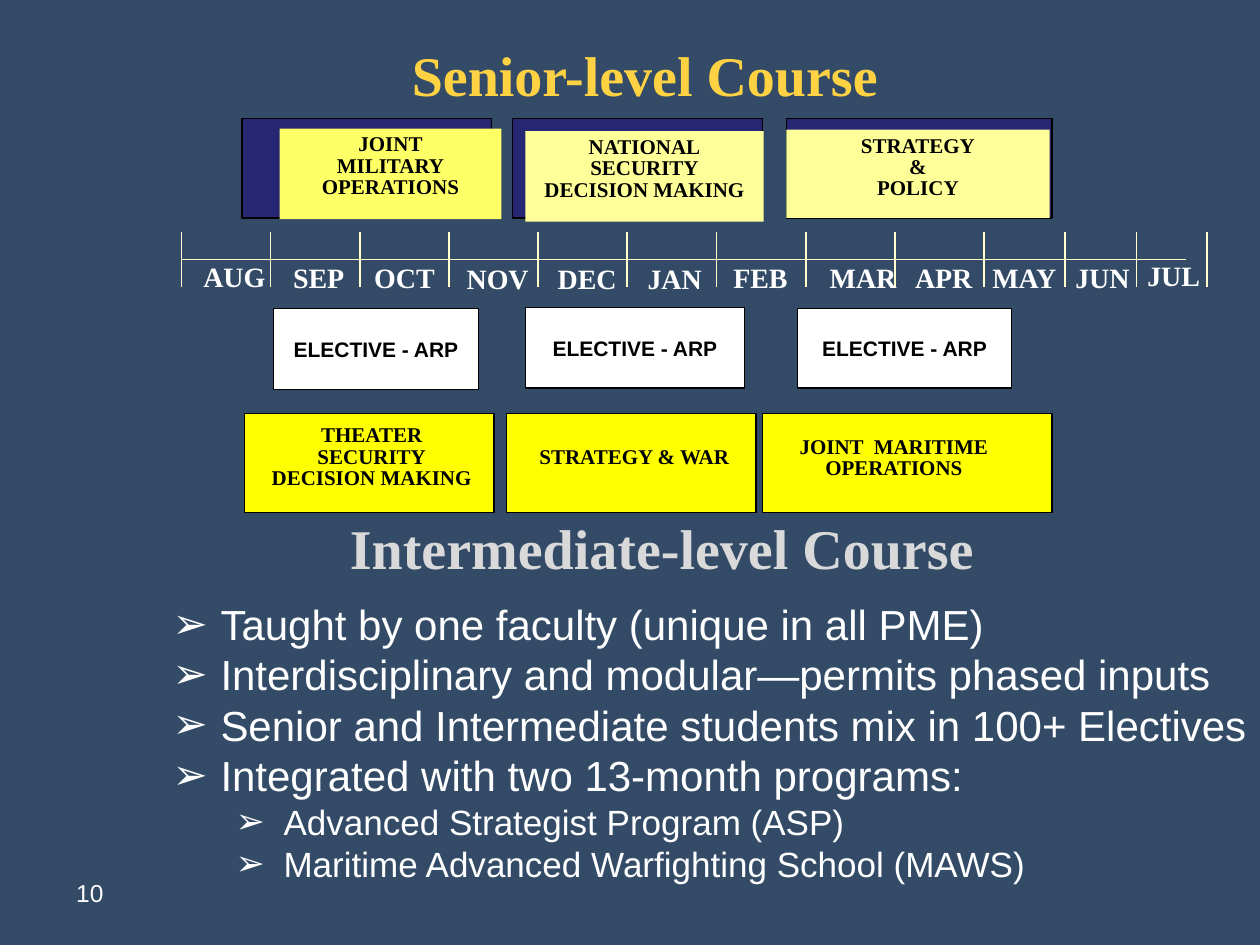
from lxml.etree import SubElement
from pptx import Presentation
from pptx.dml.color import RGBColor as RGB
from pptx.enum.shapes import MSO_CONNECTOR as CONN, MSO_SHAPE as SHAPE
from pptx.enum.text import MSO_ANCHOR as ANCHOR, MSO_AUTO_SIZE as FIT, PP_ALIGN as ALIGN
from pptx.oxml.ns import qn
from pptx.util import Inches, Pt

INK = {"back": "334B67", "gold": "FFD243", "gray": "D9D9D9", "white": "FFFFFF",
       "black": "000000", "cream": "FFFFCC", "navy": "262672", "lemon": "FFFF66",
       "pale": "FFFF99", "yellow": "FFFF00"}
SERIF, SANS = "Times New Roman", "Arial"

MONTHS = [("AUG", 1.42, 2.01, 0.88), ("SEP", 2.21, 2.02, 0.64), ("OCT", 2.77, 2.02, 0.88),
          ("NOV", 3.51, 2.03, 0.88), ("DEC", 4.22, 2.03, 0.88), ("JAN", 5.02, 2.03, 0.67),
          ("FEB", 5.69, 2.02, 0.69), ("MAR", 6.41, 2.02, 0.88), ("APR", 7.05, 2.02, 0.88),
          ("MAY", 7.69, 2.02, 0.88), ("JUN", 8.38, 2.02, 0.74), ("JUL", 8.96, 2, 0.71)]
TICKS = [1.44 + i * (7.81 - 1.44) / 9 for i in range(10)] + [8.45, 9.02, 9.58]
ELECTIVES = [(2.17, 2.45, 1.63, 0.64), (4.17, 2.44, 1.74, 0.64), (6.33, 2.45, 1.7, 0.63)]
SENIOR = [
    ((1.92, 1.98), (2.22, 1.02, 1.76, 0.72), "lemon", ["JOINT", "MILITARY", "OPERATIONS"]),
    ((4.07, 1.98), (4.17, 1.04, 1.89, 0.72), "pale", ["NATIONAL", "SECURITY", "DECISION MAKING"]),
    ((6.24, 2.11), (6.24, 1.03, 2.09, 0.7), "pale", ["STRATEGY", "&", "POLICY"]),
]
MIDDLE = [
    ((1.94, 1.98), (1.99, 3.33, 1.92, 0.98), ["THEATER", "SECURITY", "DECISION MAKING"]),
    ((4.02, 1.98), (4.07, 3.5, 1.93, 0.49), ["STRATEGY & WAR"]),
    ((6.05, 2.3), (6.21, 3.42, 1.77, 0.82), ["JOINT  MARITIME", "OPERATIONS"]),
]
POINTS = [
    (0, "Taught by one faculty (unique in all PME)"),
    (0, "Interdisciplinary and modular—permits phased inputs"),
    (0, "Senior and Intermediate students mix in 100+ Electives"),
    (0, "Integrated with two 13-month programs:"),
    (1, "Advanced Strategist Program (ASP)"),
    (1, "Maritime Advanced Warfighting School (MAWS)"),
]


def color(name):
    return RGB.from_string(INK[name])


def place(shape, box):
    shape.left, shape.top, shape.width, shape.height = map(Inches, box)


def add_run(para, text, size, tone, face, bold):
    run = para.add_run()
    run.text = text
    font = run.font
    font.size, font.name, font.bold = Pt(size), face, bold
    font.color.rgb = color(tone)


def write(shape, lines, size, tone, face=SERIF, bold=True, align=ALIGN.CENTER,
          anchor=ANCHOR.TOP, space=None):
    frame = shape.text_frame
    frame.word_wrap, frame.auto_size = True, FIT.NONE
    frame.vertical_anchor = anchor
    for i, text in enumerate(lines):
        para = frame.add_paragraph() if i else frame.paragraphs[0]
        para.alignment, para.line_spacing = align, space
        add_run(para, text, size, tone, face, bold)


def add_text(slide, box, *args, **opts):
    write(slide.shapes.add_textbox(*map(Inches, box)), *args, **opts)


def add_box(slide, box, fill, edge=True):
    shape = slide.shapes.add_shape(SHAPE.RECTANGLE, *map(Inches, box))
    shape.shadow.inherit = False
    shape.fill.solid()
    shape.fill.fore_color.rgb = color(fill)
    if edge:
        shape.line.color.rgb = color("black")
        shape.line.width = Pt(0.75)
    else:
        shape.line.fill.background()
    return shape


def add_line(slide, x1, y1, x2, y2):
    line = slide.shapes.add_connector(CONN.STRAIGHT, *map(Inches, (x1, y1, x2, y2)))
    line.line.color.rgb = color("cream")
    line.line.width = Pt(1)
    SubElement(line._element.spPr, qn("a:effectLst"))


def add_points(body):
    frame = body.text_frame
    frame.word_wrap, frame.auto_size = True, FIT.NONE
    frame.vertical_anchor = ANCHOR.TOP
    for i, (level, text) in enumerate(POINTS):
        para = frame.add_paragraph() if i else frame.paragraphs[0]
        para.level = level
        props = para._p.get_or_add_pPr()
        props.set("marL", str(Inches(0.38 + 0.5 * level)))
        props.set("indent", str(Inches(-0.38)))
        SubElement(props, qn("a:buChar"), char="➢")
        para.space_before = Pt(0)
        add_run(para, text, 20 if level else 24, "white", SANS, False)


def main():
    """Build the course calendar slide."""
    deck = Presentation()
    deck.slide_width, deck.slide_height = Inches(10), Inches(7.5)
    slide = deck.slides.add_slide(deck.slide_layouts[1])
    slide.background.fill.solid()
    slide.background.fill.fore_color.rgb = color("back")

    title, body = slide.placeholders
    place(title, (2.66, 0.27, 4.92, 0.81))
    write(title, ["Senior-level Course"], 32, "gold")
    place(body, (1.27, 4.7, 8.73, 2.39))
    add_points(body)

    add_line(slide, 1.44, 2.06, 9.41, 2.06)
    for x in TICKS:
        add_line(slide, x, 1.84, x, 2.28)
    for name, left, top, width in MONTHS:
        add_text(slide, (left, top, width, 0.44), [name], 16, "white")

    for box in ELECTIVES:
        write(add_box(slide, box, "white"), ["ELECTIVE - ARP"], 12, "black",
              face=SANS, anchor=ANCHOR.MIDDLE)
    for (left, width), box, lines in MIDDLE:
        add_box(slide, (left, 3.28, width, 0.79), "yellow")
        add_text(slide, box, lines, 12, "black", space=0.85)
    for (left, width), box, fill, lines in SENIOR:
        add_box(slide, (left, 0.94, width, 0.79), "navy")
        write(add_box(slide, box, fill, edge=False), lines, 12, "black", space=0.85)

    add_text(slide, (1.94, 4.03, 6.63, 0.64), ["Intermediate-level Course"], 32, "gray")
    add_text(slide, (0.17, 6.92, 0.75, 0.52), ["10"], 14, "white",
             face=SANS, bold=False, align=ALIGN.RIGHT)
    deck.save("out.pptx")


if __name__ == "__main__":
    main()
